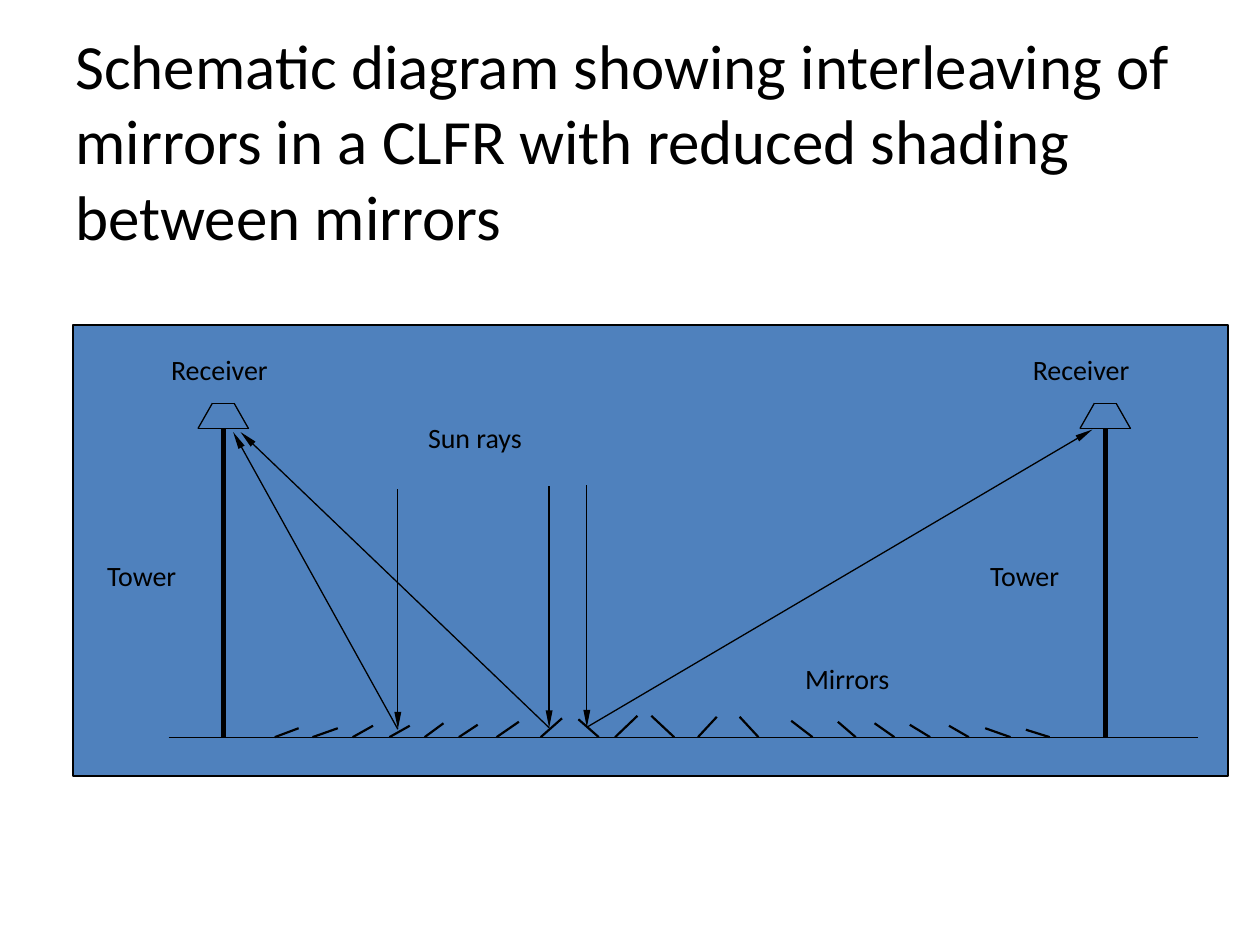
from lxml import etree
from pptx import Presentation
from pptx import util as u
from pptx.dml.color import RGBColor
from pptx.enum import shapes, text
from pptx.oxml import ns

BASE, NECK, CAP = 14.86, 8.64, 8.13
TOWERS = (4.5, 22.28)
# top x, top y, foot x
MIRRORS = (
    (6.02, 14.68, 5.54), (6.81, 14.68, 6.3), (7.52, 14.63, 7.11),
    (8.26, 14.63, 7.85), (8.94, 14.58, 8.56), (9.63, 14.61, 9.25),
    (10.46, 14.55, 10.01), (11.33, 14.48, 10.9), (12.85, 14.43, 12.4),
    (14.45, 14.45, 14.07), (11.66, 14.5, 12.07), (13.13, 14.43, 13.59),
    (14.91, 14.45, 15.29), (15.95, 14.53, 16.38), (16.89, 14.55, 17.25),
    (17.63, 14.58, 18.03), (18.34, 14.61, 18.75), (19.13, 14.63, 19.53),
    (19.86, 14.68, 20.37), (20.68, 14.71, 21.16),
)
RAYS = (
    (11.07, 9.8, 14.67, 4.85, 8.71),
    (11.83, 9.78, 14.66, 22.02, 8.66),
    (8.02, 9.86, 14.7, 4.7, 8.71),
)
LABELS = (
    ("Receiver", 3.2, 6.99, 3.38), ("Receiver", 20.57, 6.99, 3.38),
    ("Tower", 1.91, 11.13, 2.82), ("Tower", 19.71, 11.13, 2.82),
    ("Sun rays", 8.38, 8.36, 4.95), ("Mirrors", 15.98, 13.21, 3.66),
)


def color(code):
    return RGBColor.from_string(code)


def write(frame, words, size=16, font="Calibri", ink="000000", inset=None):
    frame.word_wrap = True
    frame.auto_size = text.MSO_AUTO_SIZE.NONE
    frame.vertical_anchor = text.MSO_ANCHOR.TOP
    if inset is not None:
        frame.margin_left = frame.margin_right = u.Cm(inset)
        frame.margin_top = frame.margin_bottom = u.Cm(inset)
    para = frame.paragraphs[0]
    para.alignment = text.PP_ALIGN.LEFT
    run = para.add_run()
    run.text = words
    run.font.size = u.Pt(size)
    run.font.name = font
    run.font.color.rgb = color(ink)


class Sketch:
    """Draws the elements of a slide in one style."""

    ink, fill = "000000", "4F81BD"

    def __init__(self, slide):
        self.slide = slide

    def title(self, words, *box):
        head = self.slide.shapes.title
        head.left, head.top, head.width, head.height = map(u.Cm, box)
        write(head.text_frame, words, size=36, ink=self.ink, inset=0)

    def panel(self, *box):
        rect = self.slide.shapes.add_shape(
            shapes.MSO_SHAPE.RECTANGLE, *map(u.Cm, box))
        rect.shadow.inherit = False
        rect.fill.solid()
        rect.fill.fore_color.rgb = color(self.fill)
        rect.line.color.rgb = color(self.ink)
        rect.line.width = u.Pt(1)

    def line(self, *ends, width=0.75, arrow=False):
        link = self.slide.shapes.add_connector(
            shapes.MSO_CONNECTOR.STRAIGHT, *map(u.Cm, ends))
        link.line.color.rgb = color(self.ink)
        link.line.width = u.Pt(width)
        props = link._element.spPr
        etree.SubElement(props, ns.qn("a:effectLst"))
        if arrow:
            etree.SubElement(props.find(ns.qn("a:ln")), ns.qn("a:tailEnd"),
                             type="triangle", w="sm", len="lg")

    def tower(self, x):
        self.line(x, BASE, x, NECK, width=3)
        self.line(x - 0.51, NECK, x + 0.51, NECK)
        for side in (-1, 1):
            self.line(x + side * 0.51, NECK, x + side * 0.22, CAP)
        self.line(x - 0.22, CAP, x + 0.22, CAP)

    def ray(self, x, top, foot, *goal):
        self.line(x, top, x, foot, arrow=True)
        self.line(x, foot, *goal, arrow=True)

    def label(self, words, x, y, wide):
        box = self.slide.shapes.add_textbox(*map(u.Cm, (x, y, wide, 1.3)))
        write(box.text_frame, words, ink=self.ink)


def main():
    deck = Presentation()
    deck.slide_width, deck.slide_height = u.Cm(25.4), u.Cm(19.05)
    sketch = Sketch(deck.slides.add_slide(deck.slide_layouts[5]))
    sketch.title("Schematic diagram showing interleaving of mirrors in a CLFR "
                 "with reduced shading between mirrors",
                 1.52, 0.53, 22.38, 4.65)
    sketch.panel(1.47, 6.55, 23.29, 9.09)
    for x in TOWERS:
        sketch.tower(x)
    sketch.line(3.4, BASE, 24.16, BASE)
    for x, y, foot in MIRRORS:
        sketch.line(x, y, foot, BASE, width=1.25)
    for ray in RAYS:
        sketch.ray(*ray)
    for label in LABELS:
        sketch.label(*label)
    deck.save("out.pptx")


if __name__ == "__main__":
    main()
